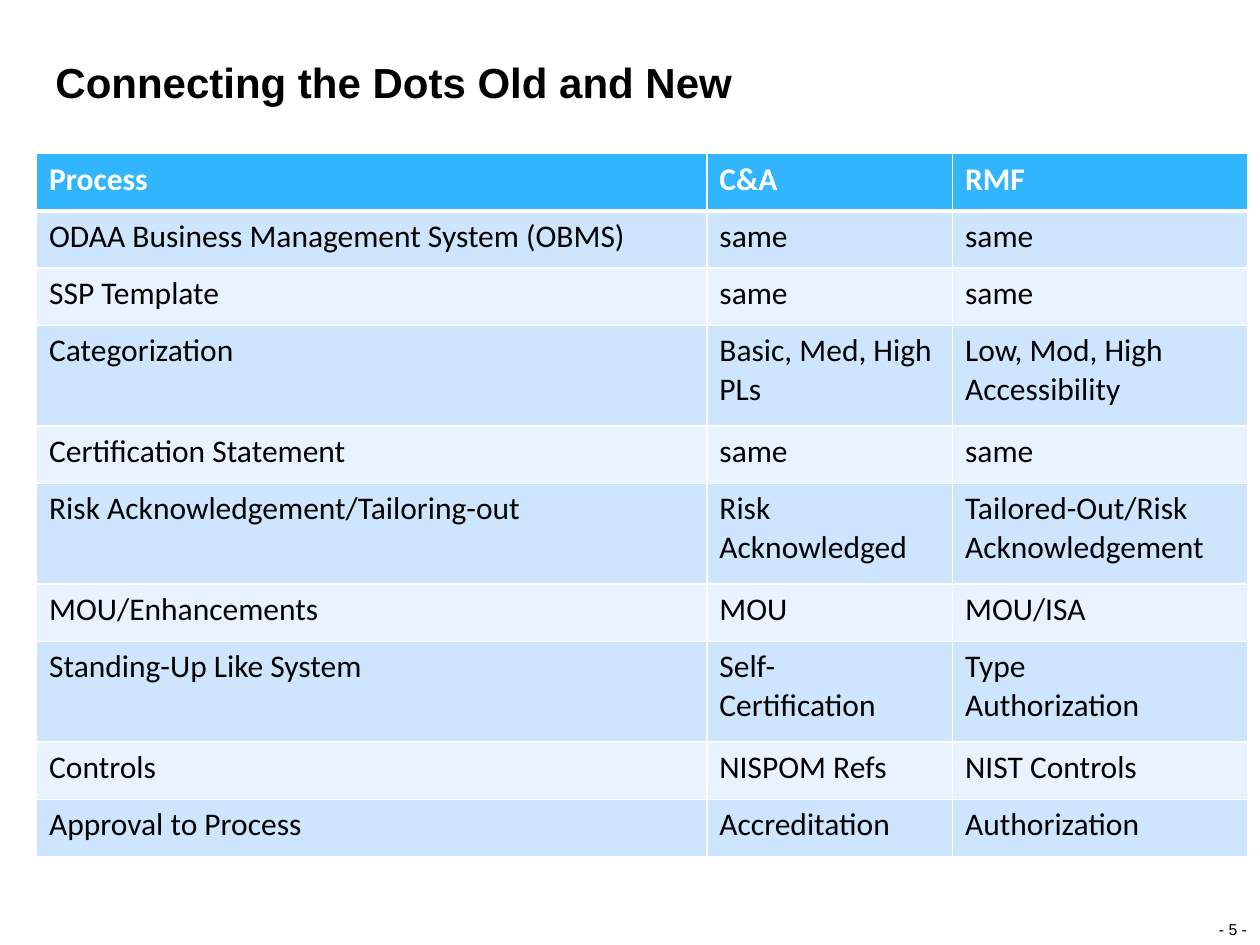
from dataclasses import dataclass

from lxml import etree
from pptx import Presentation
from pptx.dml.color import RGBColor
from pptx.enum.text import MSO_ANCHOR, MSO_AUTO_SIZE, PP_ALIGN
from pptx.oxml.ns import qn
from pptx.util import Inches, Pt

BOTTOM = MSO_ANCHOR.BOTTOM
NO_AUTOFIT = MSO_AUTO_SIZE.NONE
LEFT, CENTER = PP_ALIGN.LEFT, PP_ALIGN.CENTER

BLACK = RGBColor(0x00, 0x00, 0x00)
WHITE = RGBColor(0xFF, 0xFF, 0xFF)
HEADER_BLUE = RGBColor(0x31, 0xB6, 0xFD)
BAND_DARK = RGBColor(0xCE, 0xE5, 0xFE)
BAND_LIGHT = RGBColor(0xE8, 0xF3, 0xFF)

TITLE_ONLY_LAYOUT = 5
LINE_SPACING = 1.06
TABLE_LEFT, TABLE_TOP, TABLE_HEIGHT = 0.29, 1.22, 5.58
COLUMN_WIDTHS = (5.32, 1.95, 2.34)
TALL_ROW = 0.8
THIN_RULE, HEADER_RULE = Pt(1), Pt(3)


@dataclass(frozen=True)
class ProcessRow:
    process: str
    old: str
    new: str

    @property
    def texts(self) -> tuple[str, str, str]:
        return self.process, self.old, self.new

    @property
    def is_tall(self) -> bool:
        return any(mark in self.old for mark in "\n\v")


ROWS = (
    ProcessRow("Process", "C&A", "RMF"),
    ProcessRow("ODAA Business Management System (OBMS)", "same", "same"),
    ProcessRow("SSP Template", "same", "same"),
    ProcessRow("Categorization", "Basic, Med, High\nPLs", "Low, Mod, High\nAccessibility"),
    ProcessRow("Certification Statement", "same", "same"),
    ProcessRow("Risk Acknowledgement/Tailoring-out", "Risk\nAcknowledged",
               "Tailored-Out/Risk Acknowledgement"),
    ProcessRow("MOU/Enhancements", "MOU", "MOU/ISA"),
    ProcessRow("Standing-Up Like System", "Self-\vCertification", "Type\nAuthorization"),
    ProcessRow("Controls", "NISPOM Refs", "NIST Controls"),
    ProcessRow("Approval to Process", "Accreditation", "Authorization"),
)


def format_runs(frame, font_name: str, size: int, color: RGBColor, bold: bool = False) -> None:
    for paragraph in frame.paragraphs:
        for run in paragraph.runs:
            run.font.name = font_name
            run.font.size = Pt(size)
            run.font.bold = bold
            run.font.color.rgb = color


def set_line(shape, text: str, size: int, align: PP_ALIGN, bold: bool, wrap: bool) -> None:
    """Fill a shape with one bottom-anchored line without insets."""
    frame = shape.text_frame
    frame.text = text
    frame.margin_left = frame.margin_right = frame.margin_top = frame.margin_bottom = 0
    frame.vertical_anchor = BOTTOM
    frame.auto_size = NO_AUTOFIT
    frame.word_wrap = wrap
    frame.paragraphs[0].alignment = align
    frame.paragraphs[0].line_spacing = LINE_SPACING
    format_runs(frame, "Arial", size, BLACK, bold)


def add_borders(cell, top: int, bottom: int) -> None:
    """Draw white rules round a cell; call before the fill is set."""
    properties = cell._tc.get_or_add_tcPr()
    widths = {"a:lnL": THIN_RULE, "a:lnR": THIN_RULE, "a:lnT": top, "a:lnB": bottom}
    for tag, width in widths.items():
        line = etree.SubElement(properties, qn(tag), w=str(int(width)))
        fill = etree.SubElement(line, qn("a:solidFill"))
        etree.SubElement(fill, qn("a:srgbClr"), val=str(WHITE))


def add_process_table(slide, rows: tuple[ProcessRow, ...]) -> None:
    table = slide.shapes.add_table(
        len(rows), len(COLUMN_WIDTHS), Inches(TABLE_LEFT), Inches(TABLE_TOP),
        Inches(sum(COLUMN_WIDTHS)), Inches(TABLE_HEIGHT)).table
    for column, width in zip(table.columns, COLUMN_WIDTHS):
        column.width = Inches(width)

    tall_count = sum(row.is_tall for row in rows)
    short_row = (TABLE_HEIGHT - tall_count * TALL_ROW) / (len(rows) - tall_count)
    for index, row in enumerate(rows):
        table.rows[index].height = Inches(TALL_ROW if row.is_tall else short_row)
        is_header = index == 0
        band = HEADER_BLUE if is_header else BAND_DARK if index % 2 else BAND_LIGHT
        for cell, text in zip(table.rows[index].cells, row.texts):
            cell.text_frame.text = text
            format_runs(cell.text_frame, "Calibri", 18, WHITE if is_header else BLACK, is_header)
            add_borders(cell,
                        top=HEADER_RULE if index == 1 else THIN_RULE,
                        bottom=HEADER_RULE if is_header else THIN_RULE)
            cell.fill.solid()
            cell.fill.fore_color.rgb = band


def main() -> None:
    presentation = Presentation()
    presentation.slide_width, presentation.slide_height = Inches(10), Inches(7.5)
    slide = presentation.slides.add_slide(presentation.slide_layouts[TITLE_ONLY_LAYOUT])

    page_number = slide.shapes.add_textbox(Inches(9.63), Inches(7.29), Inches(0.31), Inches(0.16))
    set_line(page_number, "- 5 -", 9, CENTER, bold=False, wrap=False)

    title = slide.shapes.title
    title.left, title.top = Inches(0.44), Inches(0.45)
    title.width, title.height = Inches(7.04), Inches(0.4)
    set_line(title, "Connecting the Dots Old and New", 24, LEFT, bold=True, wrap=True)

    add_process_table(slide, ROWS)
    presentation.save("out.pptx")


if __name__ == "__main__":
    main()
